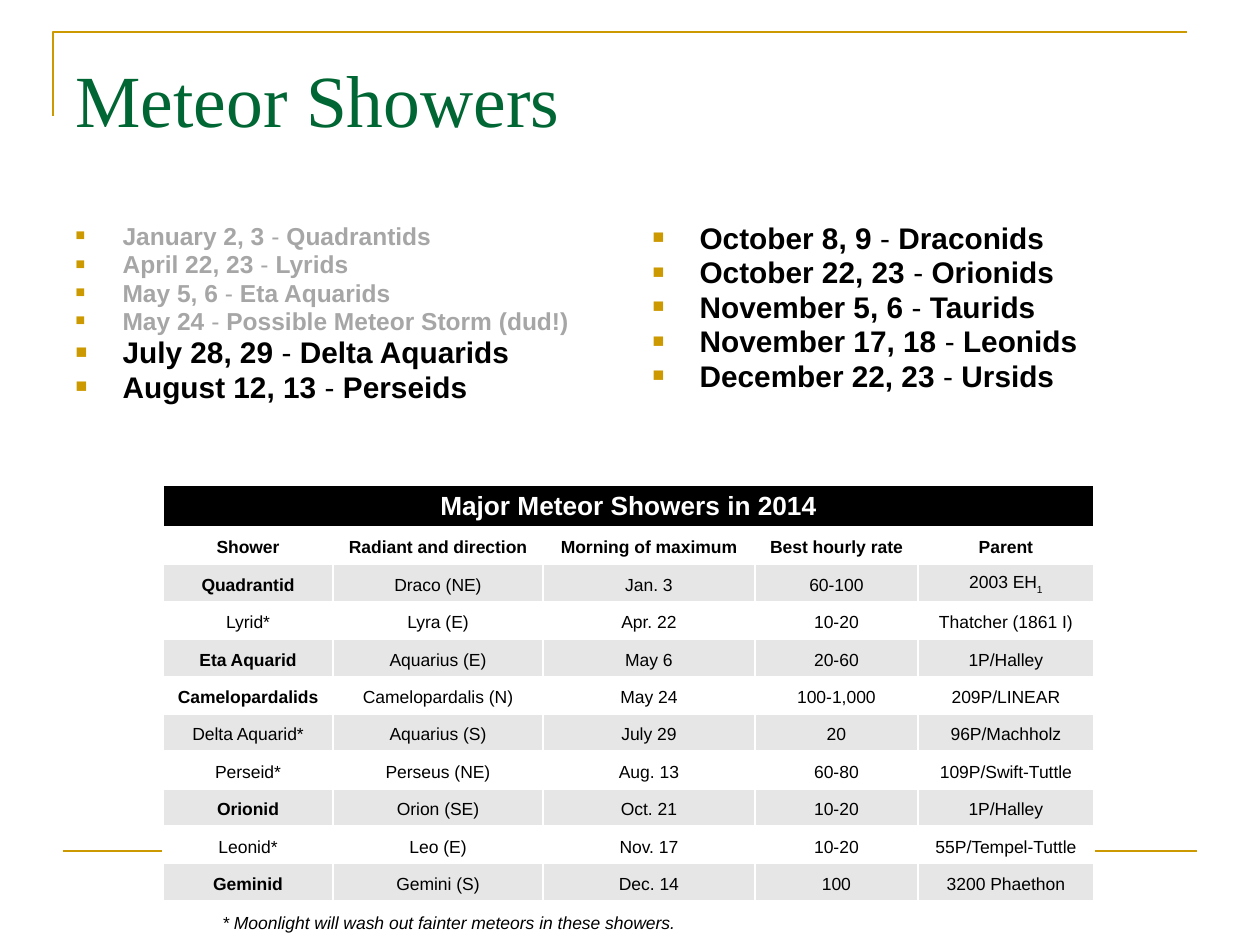
import dataclasses

import lxml.etree
import pptx
import pptx.dml.color
import pptx.enum.shapes
import pptx.enum.text
import pptx.oxml
import pptx.oxml.ns
import pptx.util


@dataclasses.dataclass(frozen=True)
class Theme:
    serif: str = "Times New Roman"
    sans: str = "Arial"
    gold: str = "CC9900"
    green: str = "006633"
    gray: str = "A6A6A6"
    black: str = "000000"
    white: str = "FFFFFF"
    band: str = "E6E6E6"
    title: int = 42
    past: int = 14
    next: int = 17
    head: int = 15
    cell: int = 10
    rule: float = 1.5


theme = Theme()
PX = 914400 // 126
color = pptx.dml.color.RGBColor.from_string
anchor = pptx.enum.text.MSO_ANCHOR
qn = pptx.oxml.ns.qn


def place(shape, left, top, width, height):
    shape.left, shape.top = left * PX, top * PX
    shape.width, shape.height = width * PX, height * PX


def write(para, text, size, tone, bold=False, face=theme.sans):
    run = para.add_run()
    run.text = text
    run.font.name = face
    run.font.size = pptx.util.Pt(size)
    run.font.bold = bold
    run.font.color.rgb = color(tone)
    return run


deck = pptx.Presentation()
deck.slide_width, deck.slide_height = 1260 * PX, 945 * PX
slide = deck.slides.add_slide(deck.slide_layouts[3])
shapes = slide.shapes

# Gold frame lines
pen = shapes.build_freeform(53, 116, scale=PX)
pen.add_line_segments([(53, 32), (1187, 32)], close=False)
corner = pen.convert_to_shape()
corner.fill.background()
corner.shadow.inherit = False
base = shapes.add_connector(
    pptx.enum.shapes.MSO_CONNECTOR.STRAIGHT, 63 * PX, 851 * PX, 1197 * PX, 851 * PX
)
lxml.etree.SubElement(base._element.spPr, qn("a:effectLst"))
for line in (corner.line, base.line):
    line.color.rgb = color(theme.gold)
    line.width = pptx.util.Pt(theme.rule)

# Title
title = shapes.title
place(title, 63, 38, 1134, 158)
frame = title.text_frame
frame.vertical_anchor = anchor.TOP
frame.margin_top = 16 * PX
frame.auto_size = pptx.enum.text.MSO_AUTO_SIZE.NONE
para = frame.paragraphs[0]
para.alignment = pptx.enum.text.PP_ALIGN.LEFT
write(para, "Meteor Showers", theme.title, theme.green, face=theme.serif)

# Two lists of dates
past = (theme.past, theme.gray)
soon = (theme.next, theme.black)
spring = [
    ("January 2, 3", "Quadrantids", past),
    ("April 22, 23", "Lyrids", past),
    ("May 5, 6", "Eta Aquarids", past),
    ("May 24", "Possible Meteor Storm (dud!)", past),
    ("July 28, 29", "Delta Aquarids", soon),
    ("August 12, 13", "Perseids", soon),
]
autumn = [
    ("October 8, 9", "Draconids", soon),
    ("October 22, 23", "Orionids", soon),
    ("November 5, 6", "Taurids", soon),
    ("November 17, 18", "Leonids", soon),
    ("December 22, 23", "Ursids", soon),
]
for index, left, dates in ((1, 63, spring), (2, 640, autumn)):
    body = slide.placeholders[index]
    place(body, left, 220, 557, 253)
    frame = body.text_frame
    frame.vertical_anchor = anchor.TOP
    frame.auto_size = pptx.enum.text.MSO_AUTO_SIZE.NONE
    for row, (date, name, style) in enumerate(dates):
        para = frame.add_paragraph() if row else frame.paragraphs[0]
        para.line_spacing = 0.8
        props = para._p.get_or_add_pPr()
        props.set("marL", str(47 * PX))
        props.set("indent", str(-47 * PX))
        space = lxml.etree.SubElement(props, qn("a:spcBef"))
        lxml.etree.SubElement(space, qn("a:spcPct"), val="20000")
        tint = lxml.etree.SubElement(props, qn("a:buClr"))
        lxml.etree.SubElement(tint, qn("a:srgbClr"), val=theme.gold)
        lxml.etree.SubElement(props, qn("a:buSzPct"), val="65000")
        lxml.etree.SubElement(props, qn("a:buFont"), typeface=theme.sans)
        lxml.etree.SubElement(props, qn("a:buChar"), char="■")
        write(para, date, *style, bold=True)
        write(para, " - ", *style)
        write(para, name, *style, bold=True)

# Table of showers
rows = [
    ("Major Meteor Showers in 2014",),
    ("Shower", "Radiant and direction", "Morning of maximum", "Best hourly rate", "Parent"),
    ("Quadrantid", "Draco (NE)", "Jan. 3", "60-100", "2003 EH"),
    ("Lyrid*", "Lyra (E)", "Apr. 22", "10-20", "Thatcher (1861 I)"),
    ("Eta Aquarid", "Aquarius (E)", "May 6", "20-60", "1P/Halley"),
    ("Camelopardalids", "Camelopardalis (N)", "May 24", "100-1,000", "209P/LINEAR"),
    ("Delta Aquarid*", "Aquarius (S)", "July 29", "20", "96P/Machholz"),
    ("Perseid*", "Perseus (NE)", "Aug. 13", "60-80", "109P/Swift-Tuttle"),
    ("Orionid", "Orion (SE)", "Oct. 21", "10-20", "1P/Halley"),
    ("Leonid*", "Leo (E)", "Nov. 17", "10-20", "55P/Tempel‑Tuttle"),
    ("Geminid", "Gemini (S)", "Dec. 14", "100", "3200 Phaethon"),
]
widths = [170, 210, 212, 163, 176]
tops = [0] + [42 + round(37.4 * step) for step in range(len(rows))]
table = shapes.add_table(
    len(rows), len(widths), 163 * PX, 485 * PX, sum(widths) * PX, tops[-1] * PX
).table
for column, width in zip(table.columns, widths):
    column.width = width * PX
table.cell(0, 0).merge(table.cell(0, len(widths) - 1))
for r, texts in enumerate(rows):
    table.rows[r].height = (tops[r + 1] - tops[r]) * PX
    fill = theme.black if r == 0 else theme.white if r % 2 else theme.band
    size, tone = (theme.cell, theme.black) if r else (theme.head, theme.white)
    for c, text in enumerate(texts):
        cell = table.cell(r, c)
        cell.fill.solid()
        cell.fill.fore_color.rgb = color(fill)
        cell.vertical_anchor = anchor.BOTTOM
        para = cell.text_frame.paragraphs[0]
        para.alignment = pptx.enum.text.PP_ALIGN.CENTER
        bold = r < 2 or (c == 0 and not text.endswith("*"))
        write(para, text, size, tone, bold)
sub = write(table.cell(2, 4).text_frame.paragraphs[0], "1", theme.cell, theme.black)
sub._r.get_or_add_rPr().set("baseline", "-30000")

# Footnote
note = shapes.add_shape(pptx.enum.shapes.MSO_SHAPE.RECTANGLE, 0, 0, PX, PX)
place(note, 210, 906, 478, 34)
note.shadow.inherit = False
note.fill.solid()
note.fill.fore_color.rgb = color(theme.white)
note.line.fill.background()
frame = note.text_frame
frame.word_wrap = False
frame.auto_size = pptx.enum.text.MSO_AUTO_SIZE.SHAPE_TO_FIT_TEXT
frame.vertical_anchor = anchor.MIDDLE
para = frame.paragraphs[0]
para.alignment = pptx.enum.text.PP_ALIGN.LEFT
text = "* Moonlight will wash out fainter meteors in these showers."
write(para, text, theme.cell, theme.black).font.italic = True

deck.save("out.pptx")
